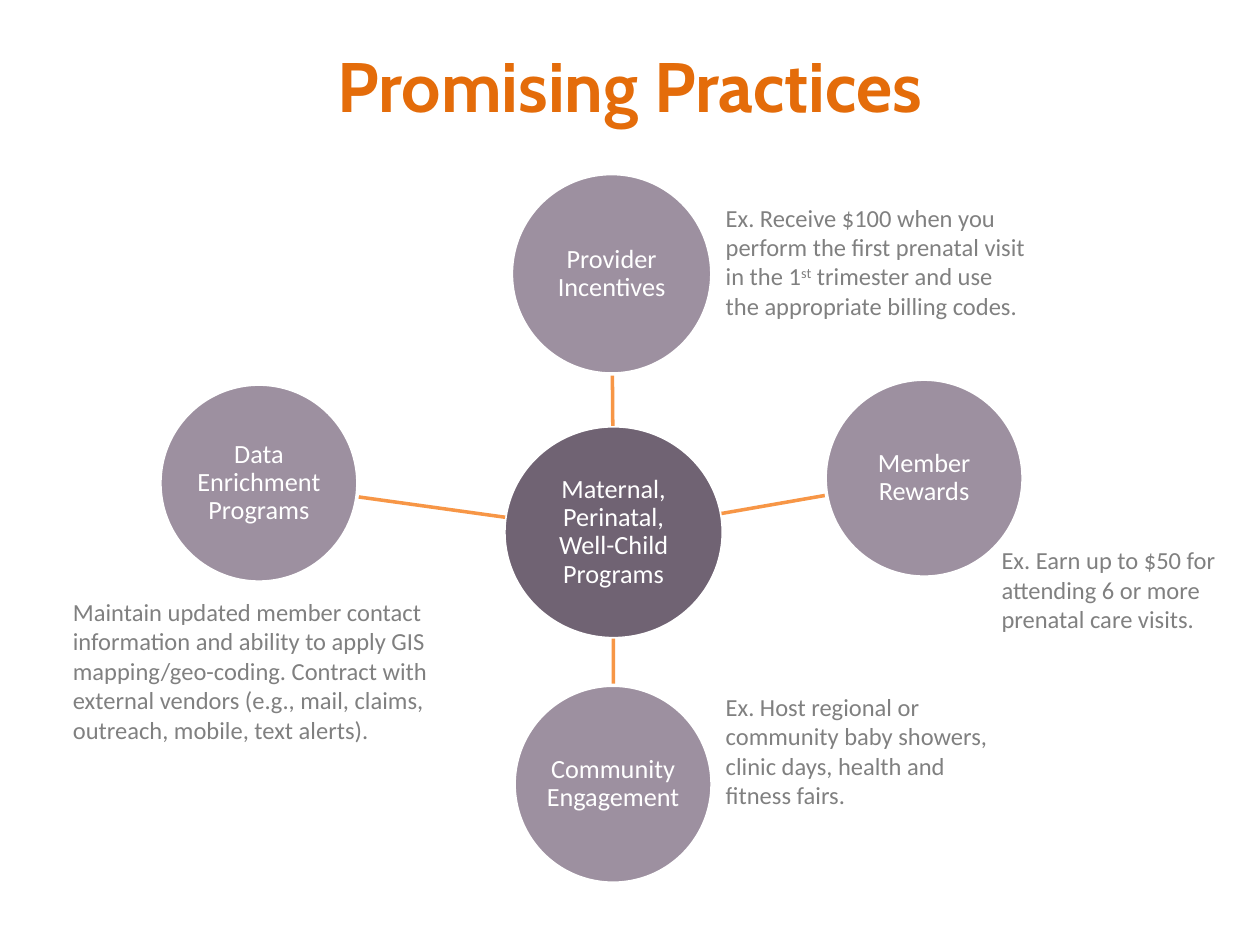
from math import hypot

from lxml.etree import SubElement
from pptx import Presentation
from pptx.dml.color import RGBColor
from pptx.enum.shapes import MSO_CONNECTOR, MSO_SHAPE
from pptx.enum.text import MSO_ANCHOR, PP_ALIGN
from pptx.oxml.ns import qn
from pptx.util import Cm, Pt

ORANGE, SPOKE = "E46C0A", "F79646"
PLUM, MAUVE, GREY, WHITE = "706373", "9D90A0", "808080", "FFFFFF"


def rgb(value):
    return RGBColor.from_string(value)


class Deck:
    def __init__(self, s, font="Calibri"):
        self.s = s
        self.font = font

    def run(self, p, text, size, color, bold=False, font=None, baseline=0):
        """Append one run; baseline is the raise in percent."""
        r = p.add_run()
        r.text = text
        r.font.size, r.font.bold = Pt(size), bold
        r.font.name = font or self.font
        r.font.color.rgb = rgb(color)
        if baseline:
            r._r.get_or_add_rPr().set("baseline", str(baseline * 1000))

    def text_box(self, left, top, width, height):
        sp = self.s.shapes.add_textbox(Cm(left), Cm(top), Cm(width), Cm(height))
        sp.text_frame.word_wrap = True
        return sp.text_frame

    def title(self, text):
        tf = self.text_box(1.75, 0.3, 21.9, 2.8)
        tf.vertical_anchor = MSO_ANCHOR.MIDDLE
        p = tf.paragraphs[0]
        p.alignment = PP_ALIGN.CENTER
        self.run(p, text, 40, ORANGE, bold=True, font="Cabin")

    def note(self, left, top, width, height, *parts):
        """Add a grey note; each part is (text, baseline)."""
        p = self.text_box(left, top, width, height).paragraphs[0]
        for text, baseline in parts:
            self.run(p, text, 14, GREY, baseline=baseline)

    def circle(self, cx, cy, width, height, fill, text):
        sp = self.s.shapes.add_shape(
            MSO_SHAPE.OVAL, Cm(cx - width / 2), Cm(cy - height / 2), Cm(width), Cm(height))
        sp.shadow.inherit = False
        sp.fill.solid()
        sp.fill.fore_color.rgb = rgb(fill)
        sp.line.color.rgb = rgb(WHITE)
        sp.line.width = Pt(2)
        tf = sp.text_frame
        tf.word_wrap = True
        tf.vertical_anchor = MSO_ANCHOR.MIDDLE
        tf.margin_left = tf.margin_right = tf.margin_top = tf.margin_bottom = Cm(0.03)
        p = tf.paragraphs[0]
        p.alignment = PP_ALIGN.CENTER
        p.line_spacing = 0.9
        self.run(p, text, 15, WHITE)

    def spoke(self, hub, outer):
        """Join the edges of two ellipses (cx, cy, width, height) along their centre line."""
        dx, dy = outer[0] - hub[0], outer[1] - hub[1]
        start = 1 / hypot(2 * dx / hub[2], 2 * dy / hub[3])
        end = 1 - 1 / hypot(2 * dx / outer[2], 2 * dy / outer[3])
        ends = [Cm(c) for t in (start, end) for c in (hub[0] + t * dx, hub[1] + t * dy)]
        line = self.s.shapes.add_connector(MSO_CONNECTOR.STRAIGHT, *ends)
        line.line.color.rgb = rgb(SPOKE)
        line.line.width = Pt(2)
        SubElement(line._element.spPr, qn("a:effectLst"))


def main():
    prs = Presentation()
    prs.slide_width, prs.slide_height = Cm(25.4), Cm(19.05)
    deck = Deck(prs.slides.add_slide(prs.slide_layouts[6]))
    deck.title("Promising Practices")

    hub = (12.37, 10.73, 4.42, 4.29)
    deck.circle(*hub, PLUM, "Maternal, Perinatal, Well-Child Programs")
    practices = [
        (12.33, 5.52, 4.04, "Provider Incentives"),
        (18.63, 9.64, 3.99, "Member Rewards"),
        (12.36, 15.81, 3.99, "Community Engagement"),
        (5.22, 9.74, 3.99, "Data Enrichment Programs"),
    ]
    for cx, cy, size, text in practices:
        outer = (cx, cy, size, size)
        deck.spoke(hub, outer)
        deck.circle(*outer, MAUVE, text)

    deck.note(14.38, 13.82, 6.32, 2.64,
              ("Ex. Host regional or community baby showers, clinic days, "
               "health and fitness fairs.", 0))
    deck.note(19.94, 10.87, 5.03, 2.06,
              ("Ex. Earn up to $50 for attending 6 or more prenatal care visits.", 0))
    deck.note(14.38, 3.96, 6.58, 2.64,
              ("Ex. Receive $100 when you perform the first prenatal visit in the 1", 0),
              ("st", 30),
              (" trimester and use the appropriate billing codes.", 0))
    deck.note(1.22, 11.91, 8.38, 3.25,
              ("Maintain updated member contact information and ability to apply GIS "
               "mapping/geo-coding. Contract with external vendors (e.g., mail, claims, "
               "outreach, mobile, text alerts).", 0))
    prs.save("out.pptx")


if __name__ == "__main__":
    main()
